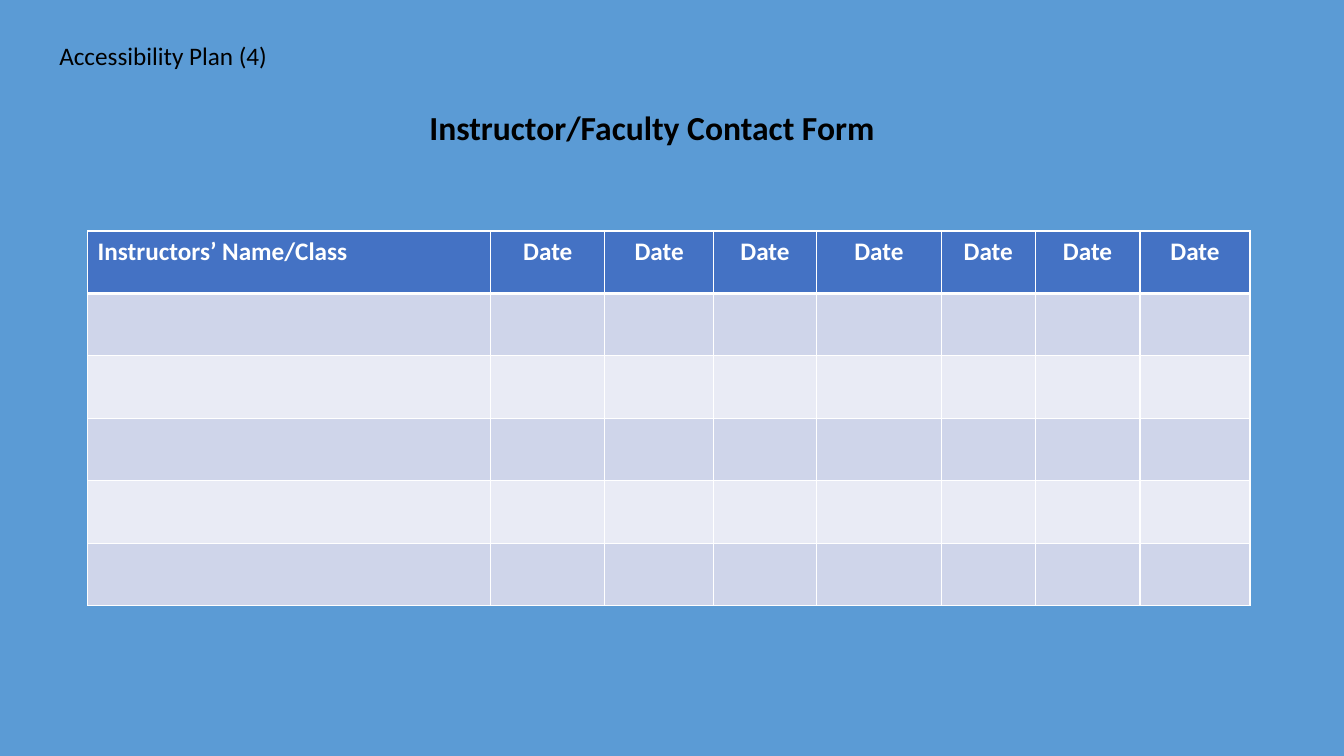
from dataclasses import dataclass

from lxml.etree import SubElement
from pptx import Presentation
from pptx.dml.color import RGBColor
from pptx.dml.fill import FillFormat
from pptx.enum.text import MSO_ANCHOR, MSO_AUTO_SIZE, PP_ALIGN
from pptx.oxml.ns import qn
from pptx.slide import Slide
from pptx.table import _Cell
from pptx.text.text import TextFrame
from pptx.util import Pt

WHITE, BLACK, BLUE = "FFFFFF", "000000", "4472C4"
BANDS = ("CFD5EA", "E9EBF5")
ROWS, HIGH = 6, 44.6


@dataclass(frozen=True)
class Column:
    """A table column: its heading, width in points and alignment."""
    head: str
    width: float
    align: PP_ALIGN = PP_ALIGN.CENTER


COLUMNS = [Column("Instructors’ Name/Class", 288, PP_ALIGN.LEFT)] + [
    Column("Date", width) for width in (81.4, 77.8, 73.4, 89.3, 67, 74.9, 78.5)
]


def paint(fill: FillFormat, tone: str) -> None:
    """Make a fill solid in the given hex colour."""
    fill.solid()
    fill.fore_color.rgb = RGBColor.from_string(tone)


def write(frame: TextFrame, text: str, *, size: float = 18, tone: str = BLACK,
          bold: bool = False, align: PP_ALIGN = PP_ALIGN.LEFT) -> None:
    """Put one formatted line of text in a frame."""
    line = frame.paragraphs[0]
    line.alignment = align
    line.line_spacing = 1.0
    line.space_before = Pt(0)
    run = line.add_run()
    run.text = text
    run.font.name = "Calibri"
    run.font.size = Pt(size)
    run.font.bold = bold
    paint(run.font.fill, tone)


def edge(cell: _Cell, row: int) -> None:
    """Draw the white borders of a cell, thick below the header row."""
    widths = {"L": 1, "R": 1, "T": 3 if row == 1 else 1, "B": 3 if row == 0 else 1}
    props = cell._tc.get_or_add_tcPr()
    for side, width in widths.items():
        line = SubElement(props, qn(f"a:ln{side}"), w=str(Pt(width)))
        solid = SubElement(line, qn("a:solidFill"))
        SubElement(solid, qn("a:srgbClr"), val=WHITE)


def add_titles(slide: Slide) -> None:
    """Add the form title and the section label."""
    title = slide.shapes.title
    title.left, title.top, title.width, title.height = Pt(299.5), Pt(72.7), Pt(366.5), Pt(36)
    label = slide.shapes.add_textbox(Pt(35.3), Pt(25.2), Pt(216), Pt(30.2))
    for shape in (title, label):
        frame = shape.text_frame
        frame.word_wrap = True
        frame.auto_size = MSO_AUTO_SIZE.NONE
        frame.vertical_anchor = MSO_ANCHOR.TOP
    write(title.text_frame, "Instructor/Faculty Contact Form", size=24, bold=True)
    write(label.text_frame, "Accessibility Plan (4)")


def add_form(slide: Slide) -> None:
    """Add the contact table with its header and banded empty rows."""
    wide = sum(col.width for col in COLUMNS)
    table = slide.shapes.add_table(
        ROWS, len(COLUMNS), Pt(62.6), Pt(165), Pt(wide), Pt(ROWS * HIGH)).table
    for row in table.rows:
        row.height = Pt(HIGH)
    for x, col in enumerate(COLUMNS):
        table.columns[x].width = Pt(col.width)
        for y in range(ROWS):
            cell = table.cell(y, x)
            edge(cell, y)
            paint(cell.fill, BANDS[(y - 1) % 2] if y else BLUE)
        write(table.cell(0, x).text_frame, col.head, tone=WHITE, bold=True, align=col.align)


def main() -> None:
    """Build the slide and save it."""
    deck = Presentation()
    deck.slide_width, deck.slide_height = Pt(960), Pt(540)
    slide = deck.slides.add_slide(deck.slide_layouts[5])
    paint(slide.background.fill, "5B9BD5")
    add_form(slide)
    add_titles(slide)
    deck.save("out.pptx")


if __name__ == "__main__":
    main()
